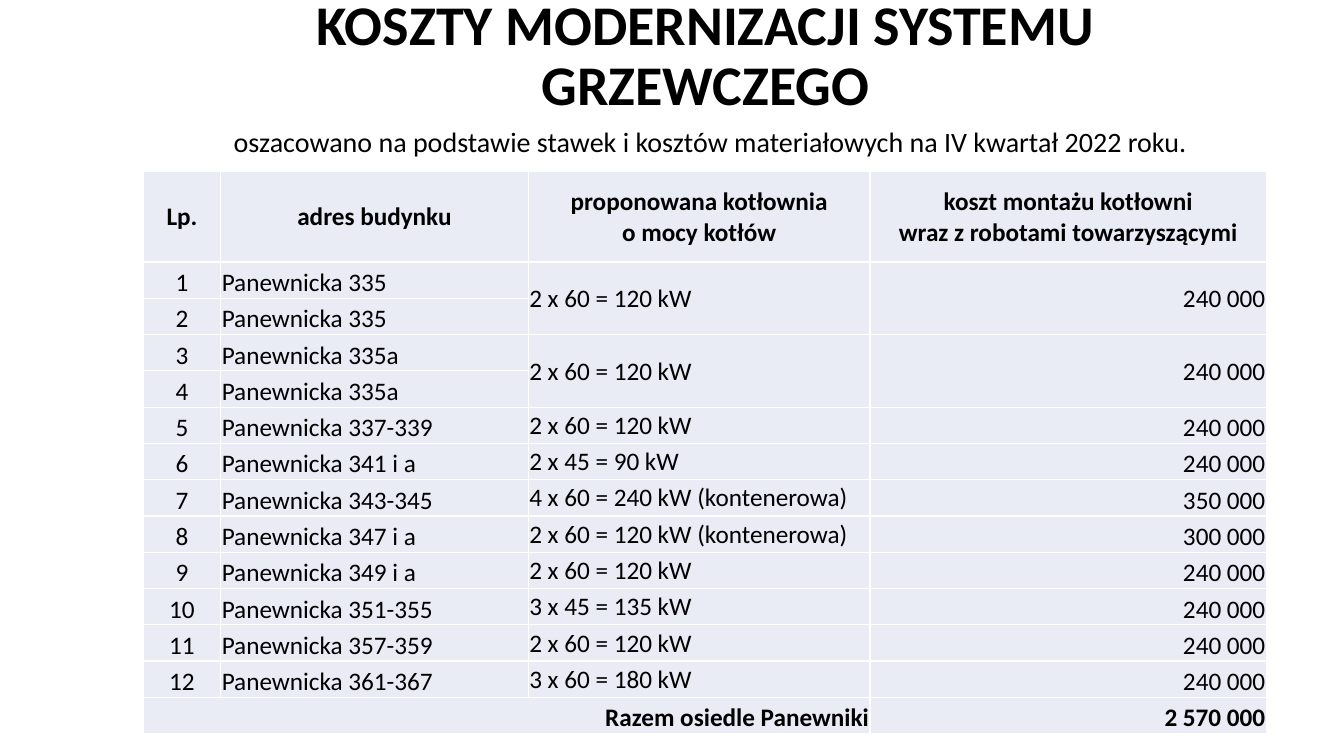
from pptx import Presentation
from pptx.dml.color import RGBColor
from pptx.enum.text import MSO_ANCHOR, PP_ALIGN
from pptx.util import Inches, Pt

BLACK = RGBColor(0x00, 0x00, 0x00)
PALE_BLUE = RGBColor(0xE9, 0xEB, 0xF5)
LEFT, CENTER, RIGHT = PP_ALIGN.LEFT, PP_ALIGN.CENTER, PP_ALIGN.RIGHT
TOP, MIDDLE, BOTTOM = MSO_ANCHOR.TOP, MSO_ANCHOR.MIDDLE, MSO_ANCHOR.BOTTOM


def write(frame, text, size=18, bold=False, align=LEFT, spacing=1.0):
    """Fill a text frame, one paragraph for each line of the text."""
    frame.word_wrap = True
    frame.text = text
    for paragraph in frame.paragraphs:
        paragraph.alignment = align
        paragraph.line_spacing = spacing
        font = paragraph.runs[0].font
        font.name, font.size, font.bold = "Calibri", Pt(size), bold
        font.color.rgb = BLACK


presentation = Presentation()
presentation.slide_width = Inches(13.33)
presentation.slide_height = Inches(7.5)
slide = presentation.slides.add_slide(presentation.slide_layouts[6])

headings = [
    ("KOSZTY MODERNIZACJI SYSTEMU GRZEWCZEGO",
     (1.37, 0.25, 11.25, 0.97), 40, True, BOTTOM),
    ("oszacowano na podstawie stawek i kosztów materiałowych na IV kwartał 2022 roku.",
     (1.04, 1.22, 12.01, 0.48), 20, False, TOP),
]
for text, place, size, bold, anchor in headings:
    heading = slide.shapes.add_textbox(*map(Inches, place)).text_frame
    heading.vertical_anchor = anchor
    heading.margin_left = heading.margin_right = Inches(0.2)
    write(heading, text, size=size, bold=bold, align=CENTER, spacing=0.9)

column_names = [
    "Lp.",
    "adres budynku",
    "proponowana kotłownia\no mocy kotłów",
    "koszt montażu kotłowni\nwraz z robotami towarzyszącymi",
]
# Address, boiler room and cost; None continues the cell above.
buildings = [
    ("335", "2 x 60 = 120 kW", "240 000"),
    ("335", None, None),
    ("335a", "2 x 60 = 120 kW", "240 000"),
    ("335a", None, None),
    ("337-339", "2 x 60 = 120 kW", "240 000"),
    ("341 i a", "2 x 45 = 90 kW", "240 000"),
    ("343-345", "4 x 60 = 240 kW (kontenerowa)", "350 000"),
    ("347 i a", "2 x 60 = 120 kW (kontenerowa)", "300 000"),
    ("349 i a", "2 x 60 = 120 kW", "240 000"),
    ("351-355", "3 x 45 = 135 kW", "240 000"),
    ("357-359", "2 x 60 = 120 kW", "240 000"),
    ("361-367", "3 x 60 = 180 kW", "240 000"),
]
rows = [column_names]
for number, (address, boilers, cost) in enumerate(buildings, start=1):
    rows.append([str(number), f"Panewnicka {address}", boilers, cost])
rows.append(["Razem osiedle Panewniki", None, None, "2 570 000"])
total_row = len(rows) - 1

column_widths = [0.77, 3.05, 3.39, 3.93]
row_heights = [0.9] + [0.36] * total_row
costs = slide.shapes.add_table(
    len(rows), len(column_widths), Inches(1.42), Inches(1.7),
    Inches(sum(column_widths)), Inches(sum(row_heights))).table
costs.first_row = costs.horz_banding = False
for column, width in zip(costs.columns, column_widths):
    column.width = Inches(width)
for row, height in zip(costs.rows, row_heights):
    row.height = Inches(height)

column_aligns = [CENTER, LEFT, LEFT, RIGHT]
for r, values in enumerate(rows):
    for c, value in enumerate(values):
        cell = costs.cell(r, c)
        cell.fill.solid()
        cell.fill.fore_color.rgb = PALE_BLUE
        cell.margin_left = cell.margin_right = cell.margin_top = Inches(0.01)
        cell.margin_bottom = 0
        if value is None:
            continue
        shared = 0 < r < total_row - 1 and rows[r + 1][c] is None
        if shared:
            cell.merge(costs.cell(r + 1, c))
        in_middle = r == 0 or shared or (c == 2 and r < total_row)
        cell.vertical_anchor = MIDDLE if in_middle else BOTTOM
        align = {0: CENTER, total_row: RIGHT}.get(r, column_aligns[c])
        write(cell.text_frame, value, bold=r in (0, total_row), align=align)
costs.cell(total_row, 0).merge(costs.cell(total_row, 2))

presentation.save("out.pptx")
